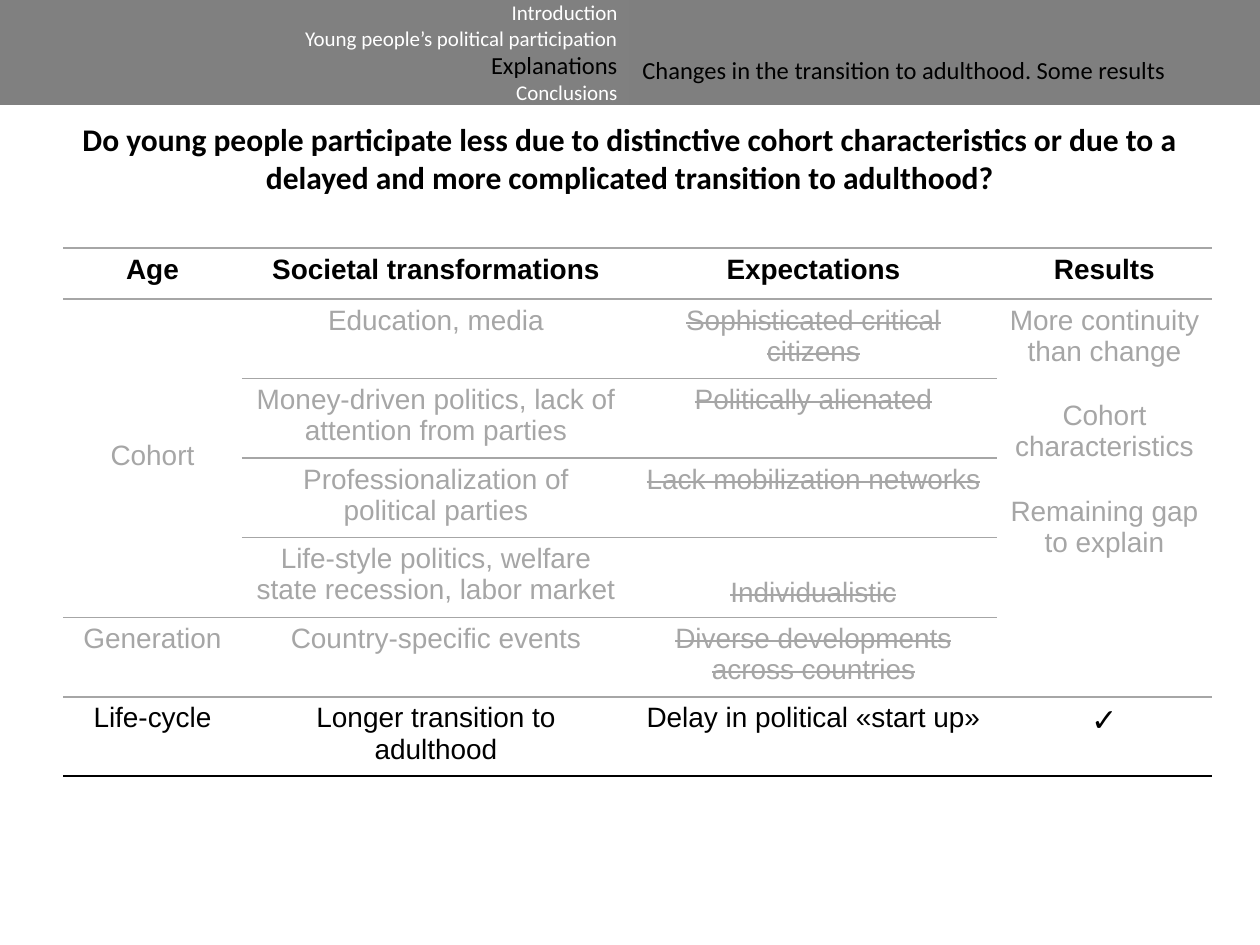
from lxml import etree
from pptx import Presentation
from pptx.dml.color import RGBColor
from pptx.enum.shapes import MSO_SHAPE
from pptx.enum.text import MSO_ANCHOR, PP_ALIGN
from pptx.oxml.ns import qn
from pptx.util import Pt

SCALE = 914400 / 126
RECT = MSO_SHAPE.RECTANGLE
MIDDLE = MSO_ANCHOR.MIDDLE
LEFT, CENTER, RIGHT = PP_ALIGN.LEFT, PP_ALIGN.CENTER, PP_ALIGN.RIGHT
BLACK, WHITE, GRAY = "000000", "FFFFFF", "A6A6A6"
PLAIN = "{2D5ABB26-0587-4C30-8999-92F81FD0307C}"

COLS = [179, 388, 367, 215]
ROWS = [51, 75, 75, 75, 78, 75, 75]
CELLS = [
    ["Age", "Societal transformations", "Expectations", "Results"],
    ["Cohort", "Education, media", "Sophisticated critical citizens",
     "More continuity than change\nCohort characteristics\nRemaining gap to explain"],
    ["", "Money-driven politics, lack of attention from parties",
     "Politically alienated", ""],
    ["", "Professionalization of political parties",
     "Lack mobilization networks", ""],
    ["", "Life-style politics, welfare state recession, labor market",
     "Individualistic", ""],
    ["Generation", "Country-specific events",
     "Diverse developments across countries", ""],
    ["Life-cycle", "Longer transition to adulthood",
     "Delay in political «start up»", "✓"],
]
DROPS = {"Cohort": 141, "Individualistic": 40}


def px(n):
    return round(n * SCALE)


def rgb(code):
    return RGBColor.from_string(code)


def style(para, size, color, align, face="Calibri", bold=False):
    para.alignment = align
    font = para.font
    font.name, font.size, font.bold = face, Pt(size), bold
    font.color.rgb = rgb(color)


def write(frame, lines, align, bold=False):
    frame.word_wrap = True
    frame.vertical_anchor = MIDDLE
    frame.text = "\n".join(text for text, _, _ in lines)
    for para, (_, size, color) in zip(frame.paragraphs, lines):
        style(para, size, color, align, bold=bold)


def add_band(slide, x, color, lines, align):
    band = slide.shapes.add_shape(RECT, px(x), 0, px(630), px(105))
    band.shadow.inherit = False
    band.fill.solid()
    band.fill.fore_color.rgb = rgb(color)
    band.line.fill.background()
    write(band.text_frame, lines, align)
    return band


def add_title(slide, text):
    box = slide.shapes.add_textbox(px(63), px(105), px(1134), px(105))
    write(box.text_frame, [(text, 18, BLACK)], CENTER, bold=True)


def add_rule(cell, side, color):
    line = etree.Element(qn("a:" + side), w=str(Pt(1)))
    fill = etree.SubElement(line, qn("a:solidFill"))
    etree.SubElement(fill, qn("a:srgbClr"), val=color)
    props = cell._tc.get_or_add_tcPr()
    props.insert(len(props.findall(qn("a:lnT"))), line)


def fill_cell(cell, text, row, col):
    cell.fill.background()
    if cell.is_spanned:
        return
    last = len(ROWS) - 1
    cell.text = text
    cell.margin_top = px(DROPS.get(text, 6))
    color = BLACK if row in (0, last) else GRAY
    size = 18 if text == "✓" else 16
    for i, para in enumerate(cell.text_frame.paragraphs):
        style(para, size, color, CENTER, "Arial", row == 0)
        if i:
            para.space_before = Pt(19)
        if col == 2 and 0 < row < last:
            para.font._rPr.set("strike", "sngStrike")
    add_rule(cell, "lnT", GRAY)
    if row == last:
        add_rule(cell, "lnB", BLACK)


def add_grid(slide):
    frame = slide.shapes.add_table(len(ROWS), len(COLS), px(63), px(248),
                                   px(sum(COLS)), px(sum(ROWS)))
    table = frame.table
    table.first_row = table.horz_banding = False
    table._tbl.tblPr.find(qn("a:tableStyleId")).text = PLAIN
    for col, width in zip(table.columns, COLS):
        col.width = px(width)
    for row, height in zip(table.rows, ROWS):
        row.height = px(height)
    table.cell(1, 0).merge(table.cell(4, 0))
    table.cell(1, 3).merge(table.cell(5, 3))
    for r, texts in enumerate(CELLS):
        for c, text in enumerate(texts):
            fill_cell(table.cell(r, c), text, r, c)


def main():
    prs = Presentation()
    prs.slide_width, prs.slide_height = px(1260), px(945)
    slide = prs.slides.add_slide(prs.slide_layouts[6])
    add_title(slide, "Do young people participate less due to distinctive cohort "
              "characteristics or due to a delayed and more complicated "
              "transition to adulthood?")
    add_grid(slide)
    add_band(slide, 0, "808080", [
        ("Introduction", 12, WHITE),
        ("Young people’s political participation", 12, WHITE),
        ("Explanations", 14, BLACK),
        ("Conclusions", 12, WHITE)], RIGHT)
    topic = add_band(slide, 630, "7F7F7F", [
        ("Changes in the transition to adulthood. Some results", 14, BLACK)], LEFT)
    topic.text_frame.margin_top = px(40)
    prs.save("out.pptx")


if __name__ == "__main__":
    main()
